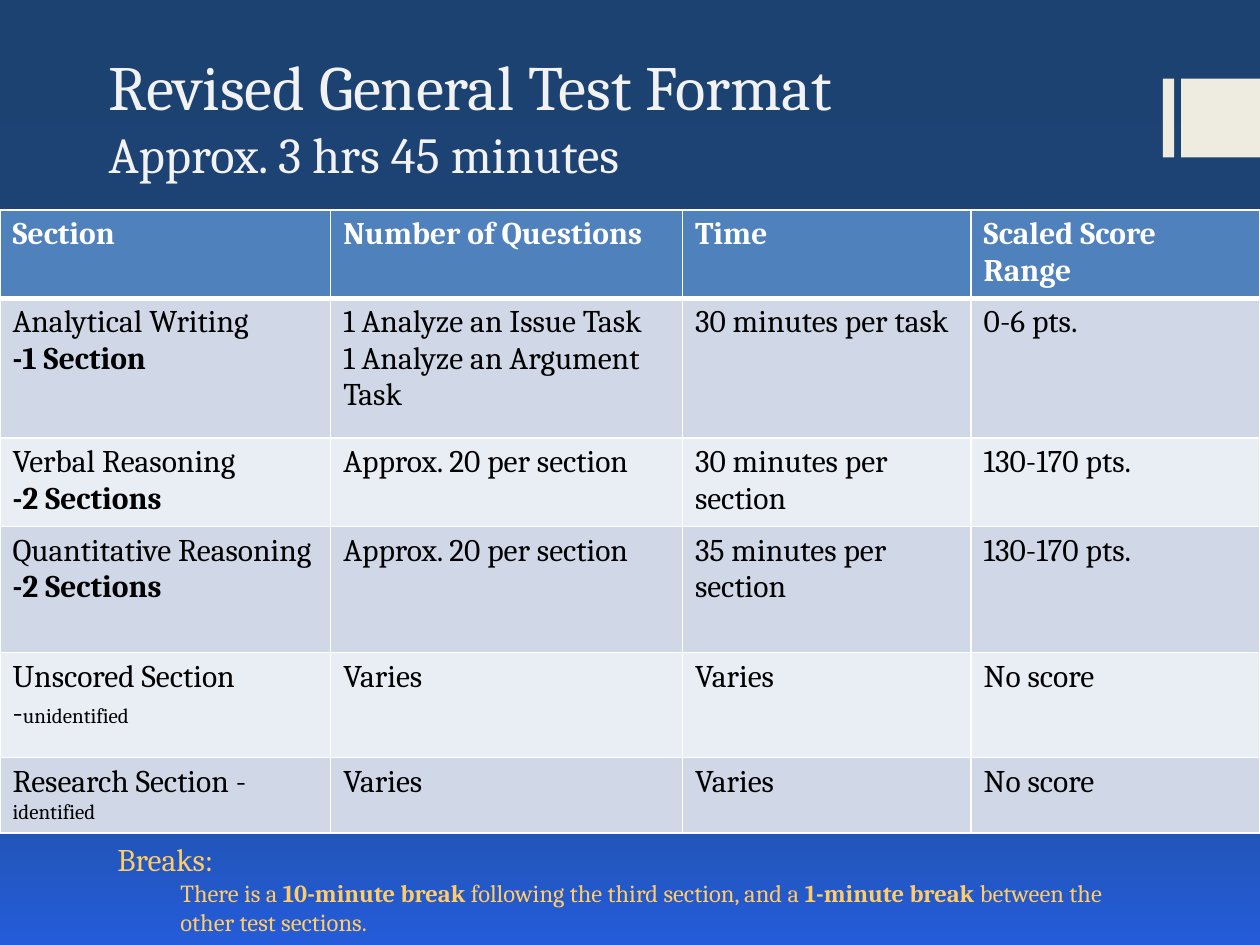
from copy import deepcopy

from lxml import etree
from pptx import Presentation
from pptx.dml.color import RGBColor
from pptx.enum.shapes import MSO_SHAPE
from pptx.enum.text import MSO_ANCHOR, MSO_AUTO_SIZE
from pptx.oxml.ns import qn
from pptx.util import Pt

RECTANGLE = MSO_SHAPE.RECTANGLE
TOP, BOTTOM = MSO_ANCHOR.TOP, MSO_ANCHOR.BOTTOM
FIT_SHAPE = MSO_AUTO_SIZE.SHAPE_TO_FIT_TEXT

FONT = "Cambria"
WHITE, BLACK, OFF_WHITE, CREAM, GOLD = "FFFFFF", "000000", "F2F2F2", "EEECE1", "FFCC66"
HEADER_FILL, BAND_FILLS = "4F81BD", ("D0D8E8", "E9EDF4")
BACKGROUND_STOPS = ((0, "1C4271"), (0.65, "1E477A"), (1, "245CD9"))
BOLD, SMALL = {"bold": True}, {"size": Pt(12)}

COLUMN_WIDTHS = (189, 201, 165, 165)
ROW_HEIGHTS = (50, 80, 50, 72, 60, 43)
TEST_SECTIONS = (
    ("Section", "Number of Questions", "Time", "Scaled Score Range"),
    (["Analytical Writing", [("-1 Section", BOLD)]],
     ["1 Analyze an Issue Task", "1 Analyze an Argument Task"],
     "30 minutes per task", "0-6 pts."),
    (["Verbal Reasoning", [("-2 Sections", BOLD)]],
     "Approx. 20 per section", "30 minutes per section", "130-170 pts."),
    (["Quantitative Reasoning", [("-2 Sections", BOLD)]],
     "Approx. 20 per section", "35 minutes per section", "130-170 pts."),
    ([[("Unscored Section -", {}), ("unidentified", SMALL)]], "Varies", "Varies", "No score"),
    ([[("Research Section - ", {}), ("identified", SMALL)]], "Varies", "Varies", "No score"),
)
BREAKS = [("There is a ", {}), ("10-minute break", BOLD),
          (" following the third section, and a ", {}), ("1-minute break", BOLD),
          (" between the other test sections.", {})]


def color(hex_string):
    return RGBColor.from_string(hex_string)


class SlideBuilder:
    """Holds the font and the current slide, and adds each kind of element."""

    def __init__(self, slide, font_name):
        self.slide = slide
        self.font_name = font_name

    def background(self, stops):
        fill = self.slide.background.fill
        fill.gradient()
        fill.gradient_angle = 270
        stop_list = self.slide.element.find(".//" + qn("a:gsLst"))
        stop_list.append(deepcopy(stop_list[-1]))
        for stop, (position, hex_string) in zip(fill.gradient_stops, stops):
            stop.position = position
            stop.color.rgb = color(hex_string)

    def rectangle(self, left, top, width, height, fill):
        shape = self.slide.shapes.add_shape(RECTANGLE, Pt(left), Pt(top), Pt(width), Pt(height))
        shape.shadow.inherit = False
        shape.fill.solid()
        shape.fill.fore_color.rgb = color(fill)
        shape.line.fill.background()

    def text_box(self, left, top, width, height, anchor=TOP):
        shape = self.slide.shapes.add_textbox(Pt(left), Pt(top), Pt(width), Pt(height))
        frame = shape.text_frame
        frame.word_wrap = True
        frame.vertical_anchor = anchor
        return frame

    def add_text(self, paragraph, content, size, hex_string, bold=False):
        font = paragraph.font
        font.name, font.size, font.bold = self.font_name, Pt(size), bold
        font.color.rgb = color(hex_string)
        runs = [(content, {})] if isinstance(content, str) else content
        for text, changes in runs:
            run = paragraph.add_run()
            run.text = text
            run.font.size = changes.get("size")
            run.font.bold = changes.get("bold")

    def borders(self, cell, **widths):
        properties = cell._tc.get_or_add_tcPr()
        for side in "LRTB":
            line = etree.SubElement(properties, qn(f"a:ln{side}"), w=str(Pt(widths.get(side, 1))))
            fill = etree.SubElement(line, qn("a:solidFill"))
            etree.SubElement(fill, qn("a:srgbClr"), val=WHITE)

    def table(self, left, top, rows, column_widths, row_heights):
        table = self.slide.shapes.add_table(
            len(rows), len(column_widths), Pt(left), Pt(top),
            Pt(sum(column_widths)), Pt(sum(row_heights))).table
        for column, width in zip(table.columns, column_widths):
            column.width = Pt(width)
        for row_index, (row, height) in enumerate(zip(rows, row_heights)):
            table.rows[row_index].height = Pt(height)
            for column_index, content in enumerate(row):
                self.cell(table.cell(row_index, column_index), content, row_index)

    def cell(self, cell, content, row_index):
        header = row_index == 0
        self.borders(cell, T=3 if row_index == 1 else 1, B=3 if header else 1)
        cell.fill.solid()
        cell.fill.fore_color.rgb = color(HEADER_FILL if header else BAND_FILLS[(row_index - 1) % 2])
        frame = cell.text_frame
        for index, line in enumerate([content] if isinstance(content, str) else content):
            paragraph = frame.add_paragraph() if index else frame.paragraphs[0]
            self.add_text(paragraph, line, 18, WHITE if header else BLACK, header)


def main():
    presentation = Presentation()
    presentation.slide_width, presentation.slide_height = Pt(720), Pt(540)
    slide = presentation.slides.add_slide(presentation.slide_layouts[6])
    builder = SlideBuilder(slide, FONT)

    builder.background(BACKGROUND_STOPS)
    builder.rectangle(664.5, 45, 6.5, 45, CREAM)
    builder.rectangle(675, 45, 45, 45, CREAM)

    title = builder.text_box(55, 18, 576, 90.5, BOTTOM).paragraphs[0]
    builder.add_text(title, "Revised General Test Format", 36, OFF_WHITE)
    title.add_line_break()
    builder.add_text(title, [("Approx. 3 hrs 45 minutes", {"size": Pt(28.8)})], 36, OFF_WHITE)

    builder.table(0, 120, TEST_SECTIONS, COLUMN_WIDTHS, ROW_HEIGHTS)

    breaks = builder.text_box(60, 476.5, 600, 63.5)
    breaks.auto_size = FIT_SHAPE
    builder.add_text(breaks.paragraphs[0], "Breaks:", 18, GOLD)
    detail = breaks.add_paragraph()
    detail.level = 1
    builder.add_text(detail, BREAKS, 14, GOLD)
    detail._p.get_or_add_pPr().set("marL", str(Pt(36)))

    presentation.save("out.pptx")


if __name__ == "__main__":
    main()
